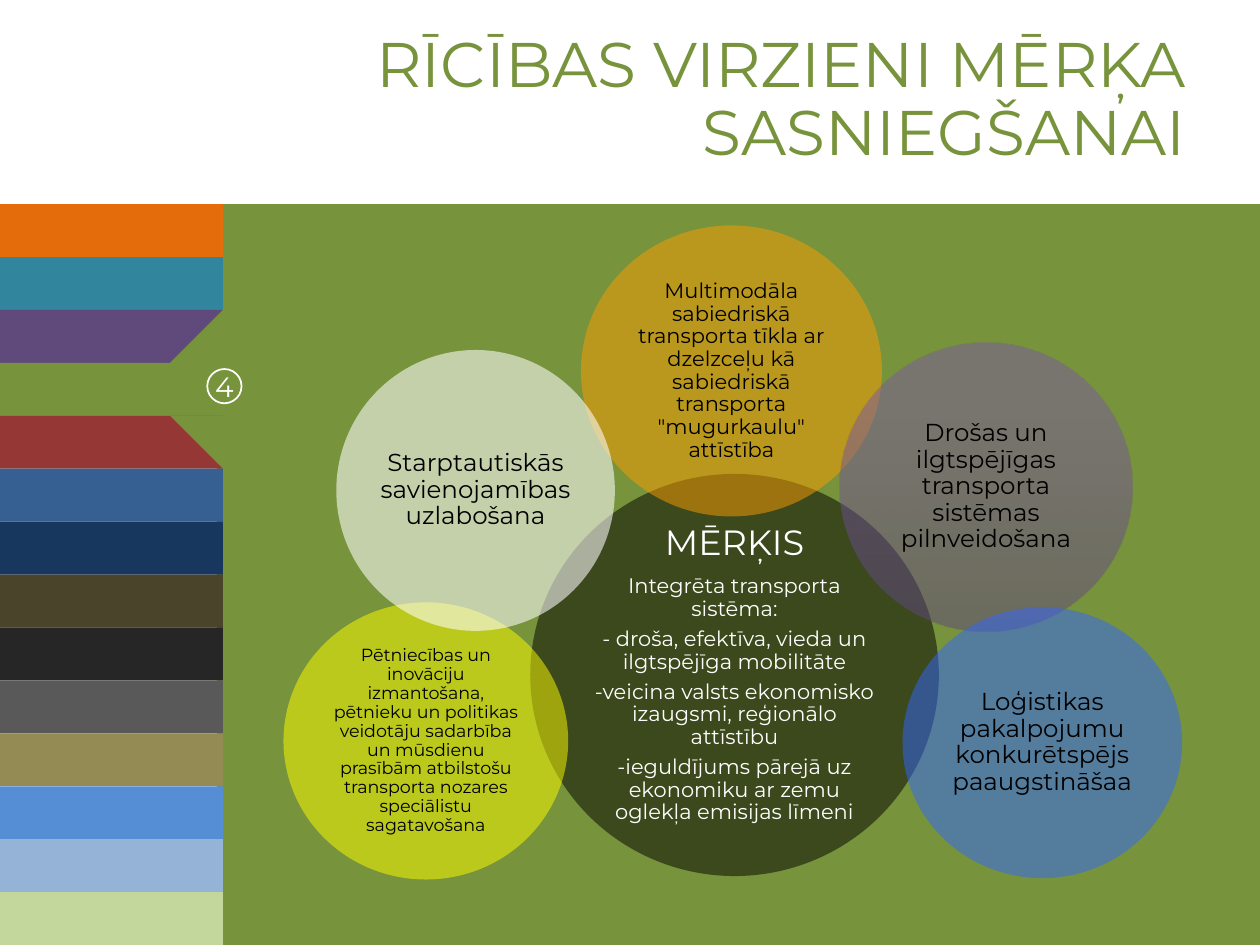
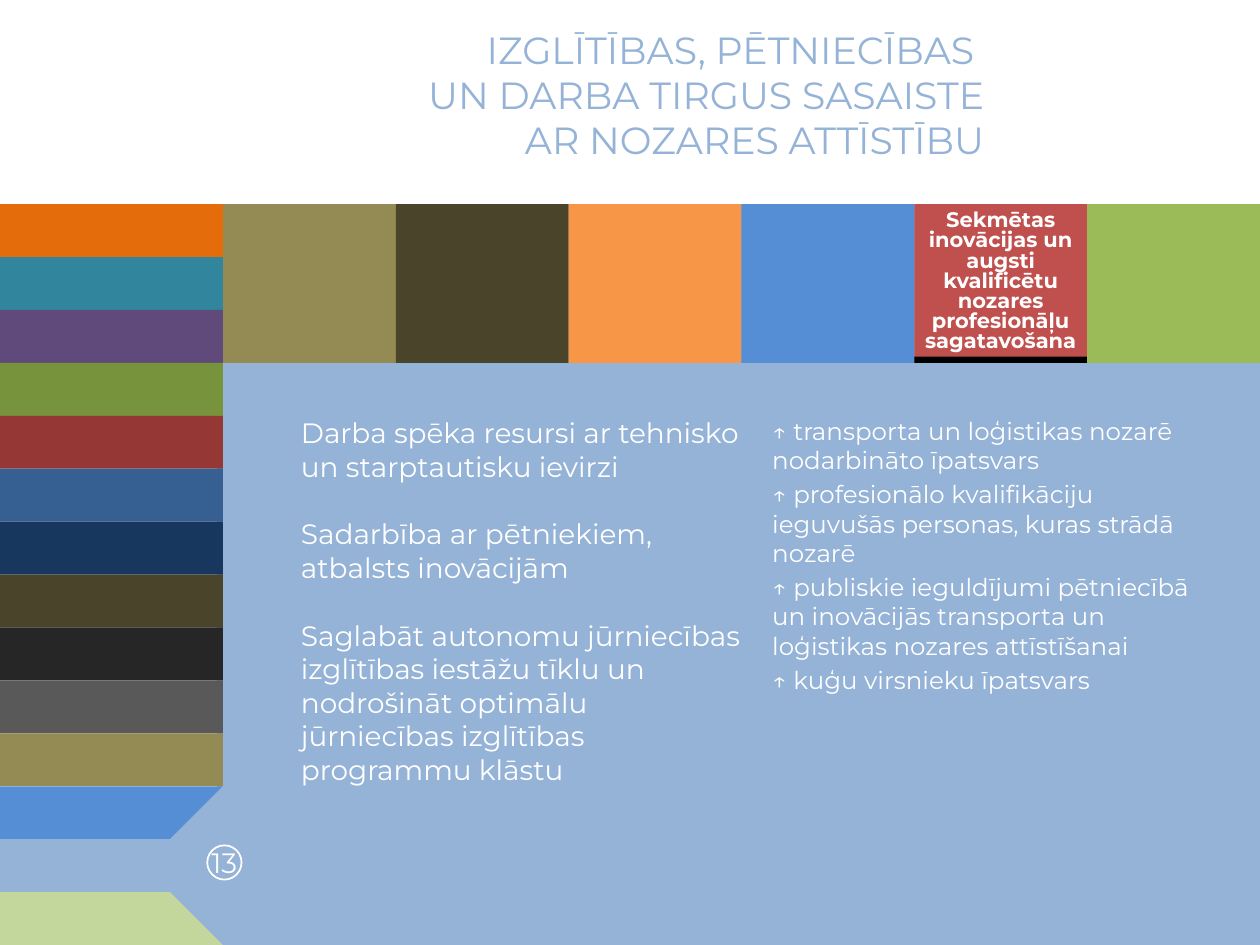
from dataclasses import dataclass

from pptx import Presentation
from pptx.dml.color import RGBColor
from pptx.enum.shapes import MSO_SHAPE
from pptx.enum.text import MSO_ANCHOR, PP_ALIGN
from pptx.oxml.ns import qn
from pptx.util import Pt


@dataclass(frozen=True)
class Theme:
    font: str = "Montserrat"
    white: str = "FFFFFF"
    black: str = "000000"
    bands: tuple = (
        "E46C0A", "31859C", "604A7B", "77933C", "953735", "376092", "17375E",
        "4A452A", "262626", "595959", "948A54", "558ED5", "95B3D7", "C3D69B",
    )
    tiles: tuple = ("948A54", "4A452A", "F79646", "558ED5", "C0504D", "9BBB59")
    large_title: float = 36
    small_title: float = 21.6
    goal_heading: float = 20
    body: float = 16
    note: float = 14
    label: float = 12
    small: float = 10


THEME = Theme()
SLIDE_W, SLIDE_H = 720, 540
HEADER_H = 116.64
SIDEBAR_W = 127.44
PANEL_LEFT = 124
BAND_H = (SLIDE_H - HEADER_H) / len(THEME.bands)
TILE_W = (SLIDE_W - SIDEBAR_W) / len(THEME.tiles)
TILE_H = 3 * BAND_H
BADGE_D = 19.6

# label, size, left, top, width, height, fill colours, opacity in percent
DIRECTIONS = [
    ('Multimodāla sabiedriskā transporta tīkla ar dzelzceļu kā sabiedriskā '
     'transporta "mugurkaulu" attīstība',
     THEME.label, 332, 128.8, 172, 166.3, ["FE9D00"], 50),
    ("Drošas un ilgtspējīgas transporta sistēmas pilnveidošana",
     THEME.note, 480, 195.8, 167, 164.9, ["5F4480", "7B58A6"], 50),
    ("Loģistikas pakalpojumu konkurētspējs paaugstināšaa",
     THEME.note, 515.7, 347, 159.8, 154.8, ["3366FF"], 50),
    ("Pētniecības un inovāciju izmantošana, pētnieku un politikas veidotāju "
     "sadarbība un mūsdienu prasībām atbilstošu transporta nozares speciālistu "
     "sagatavošana",
     THEME.small, 162, 344.2, 162.7, 158.4, ["FFFF00"], 50),
    ("Starptautiskās savienojamības uzlabošana",
     THEME.note, 192.2, 200, 159.2, 160.5, ["FFFFFF"], 57),
]
GOAL = [
    "MĒRĶIS",
    "Integrēta transporta sistēma:",
    "- droša, efektīva, vieda un ilgtspējīga mobilitāte",
    "-veicina valsts ekonomisko izaugsmi, reģionālo attīstību",
    "-ieguldījums pārejā uz ekonomiku ar zemu oglekļa emisijas līmeni",
]
MEASURES = [
    "Darba spēka resursi ar tehnisko un starptautisku ievirzi",
    "Sadarbība ar pētniekiem, atbalsts inovācijām",
    "Saglabāt autonomu jūrniecības izglītības iestāžu tīklu un nodrošināt "
    "optimālu jūrniecības izglītības programmu klāstu",
]
INDICATORS = [
    "↑ transporta un loģistikas nozarē nodarbināto īpatsvars",
    "↑ profesionālo kvalifikāciju ieguvušās personas, kuras strādā nozarē",
    "↑ publiskie ieguldījumi pētniecībā un inovācijās transporta un "
    "loģistikas nozares attīstīšanai",
    "↑ kuģu virsnieku īpatsvars",
]


def color(code):
    return RGBColor.from_string(code)


def add_figure(slide, kind, left, top, width, height, fill=None):
    figure = slide.shapes.add_shape(kind, Pt(left), Pt(top), Pt(width), Pt(height))
    figure.shadow.inherit = False
    figure.line.fill.background()
    if fill:
        figure.fill.solid()
        figure.fill.fore_color.rgb = color(fill)
    else:
        figure.fill.background()
    return figure


def set_insets(frame, left, top, right, bottom):
    frame.margin_left, frame.margin_top = Pt(left), Pt(top)
    frame.margin_right, frame.margin_bottom = Pt(right), Pt(bottom)


def write(frame, texts, size, ink, align=PP_ALIGN.LEFT, spacing=1.0,
          before=0, after=0, bold=False):
    """Fill a frame with one paragraph per text; the first has no space before."""
    for index, text in enumerate(texts):
        paragraph = frame.add_paragraph() if index else frame.paragraphs[0]
        paragraph.text = text
        paragraph.alignment = align
        paragraph.line_spacing = spacing
        paragraph.space_before = Pt(before if index else 0)
        paragraph.space_after = Pt(after)
        paragraph.font.name = THEME.font
        paragraph.font.size = Pt(size)
        paragraph.font.bold = bold
        paragraph.font.color.rgb = color(ink)


def add_text(slide, left, top, width, height, texts, size, ink, **style):
    box = slide.shapes.add_textbox(Pt(left), Pt(top), Pt(width), Pt(height))
    box.text_frame.word_wrap = True
    write(box.text_frame, texts, size, ink, **style)


def add_sidebar(slide, number):
    """Draw the coloured bands, with the band of this section opening into the panel."""
    accent = THEME.bands[number - 1]
    for row, fill in enumerate(THEME.bands):
        add_figure(slide, MSO_SHAPE.RECTANGLE, 0, HEADER_H + row * BAND_H,
                   SIDEBAR_W, BAND_H, fill)
    band_top = HEADER_H + (number - 1) * BAND_H
    for top, rotation in ((band_top - BAND_H, 270), (band_top + BAND_H, 180)):
        notch = add_figure(slide, MSO_SHAPE.RIGHT_TRIANGLE, SIDEBAR_W - BAND_H, top,
                           BAND_H, BAND_H, accent)
        notch.rotation = rotation

    badge = add_figure(slide, MSO_SHAPE.OVAL, SIDEBAR_W + 0.8 - BADGE_D / 2,
                       band_top + (BAND_H - BADGE_D) / 2 - 1.8, BADGE_D, BADGE_D)
    badge.line.color.rgb = color(THEME.white)
    badge.line.width = Pt(1)
    set_insets(badge.text_frame, 0, 0, 0, 0)
    badge.text_frame.word_wrap = False
    write(badge.text_frame, [str(number)], THEME.body, THEME.white,
          align=PP_ALIGN.CENTER)


def add_panel(slide, number):
    add_figure(slide, MSO_SHAPE.RECTANGLE, PANEL_LEFT, HEADER_H,
               SLIDE_W - PANEL_LEFT, SLIDE_H - HEADER_H, THEME.bands[number - 1])


def add_title(slide, number, text, left, top, width, size, spacing=1.0):
    add_text(slide, left, top, width, 81.4, [text], size, THEME.bands[number - 1],
             align=PP_ALIGN.RIGHT, spacing=spacing)


def add_circle(slide, left, top, width, height, fills, opacity, texts, size, ink):
    """Draw a translucent circle; two fills make a gradient from bottom to top."""
    circle = add_figure(slide, MSO_SHAPE.OVAL, left, top, width, height, fills[0])
    if len(fills) > 1:
        circle.fill.gradient()
        circle.fill.gradient_angle = 90
        for stop, fill, position in zip(circle.fill.gradient_stops, fills, (0, 0.8)):
            stop.color.rgb = color(fill)
            stop.position = position
    for tint in circle.element.spPr.iter(qn("a:srgbClr")):
        alpha = tint.makeelement(qn("a:alpha"), {"val": str(opacity * 1000)})
        tint.append(alpha)
    frame = circle.text_frame
    frame.word_wrap = True
    frame.vertical_anchor = MSO_ANCHOR.MIDDLE
    set_insets(frame, 1.5, 1.5, 1.5, 1.5)
    write(frame, texts, size, ink, align=PP_ALIGN.CENTER, spacing=0.9,
          after=0.35 * size)
    return circle


def add_tiles(slide, active, label):
    for column, fill in enumerate(THEME.tiles):
        left = SIDEBAR_W + column * TILE_W
        tile = add_figure(slide, MSO_SHAPE.RECTANGLE, left, HEADER_H,
                          TILE_W, TILE_H, fill)
        if column == active:
            frame = tile.text_frame
            frame.word_wrap = True
            frame.vertical_anchor = MSO_ANCHOR.TOP
            set_insets(frame, 3.6, 4.3, 3.6, 0)
            write(frame, [label], THEME.label, THEME.white,
                  align=PP_ALIGN.CENTER, spacing=0.8, bold=True)
            add_figure(slide, MSO_SHAPE.RECTANGLE, left, HEADER_H + TILE_H - 3.6,
                       TILE_W, 3.6, THEME.black)


def build_directions(slide):
    number = 4
    add_panel(slide, number)
    add_title(slide, number, "RĪCĪBAS VIRZIENI MĒRĶA SASNIEGŠANAI",
              157.7, 15.1, 527, THEME.large_title, spacing=0.9)
    add_sidebar(slide, number)

    goal = add_circle(slide, 303, 270.8, 233.5, 229.8, [THEME.black], 50,
                      GOAL, THEME.label, THEME.white)
    heading = goal.text_frame.paragraphs[0]
    heading.font.size = Pt(THEME.goal_heading)
    heading.space_after = Pt(0.35 * THEME.goal_heading)
    for label, size, left, top, width, height, fills, opacity in DIRECTIONS:
        add_circle(slide, left, top, width, height, fills, opacity,
                   [label], size, THEME.black)


def build_education(slide):
    number = 13
    add_panel(slide, number)
    add_tiles(slide, 4, "Sekmētas inovācijas un augsti kvalificētu nozares "
                        "profesionāļu sagatavošana")
    add_sidebar(slide, number)
    add_title(slide, number,
              "IZGLĪTĪBAS, PĒTNIECĪBAS \vUN DARBA TIRGUS SASAISTE\v"
              "AR NOZARES ATTĪSTĪBU",
              198, 11.5, 371.5, THEME.small_title)
    add_text(slide, 164.9, 234, 267, 235, MEASURES, THEME.body, THEME.white,
             before=19.5)
    add_text(slide, 434.2, 234, 266.4, 229, INDICATORS, THEME.note, THEME.white,
             before=2.6)


def main():
    deck = Presentation()
    deck.slide_width, deck.slide_height = Pt(SLIDE_W), Pt(SLIDE_H)
    blank = deck.slide_layouts[6]
    for build in (build_directions, build_education):
        build(deck.slides.add_slide(blank))
    deck.save("out.pptx")


if __name__ == "__main__":
    main()
